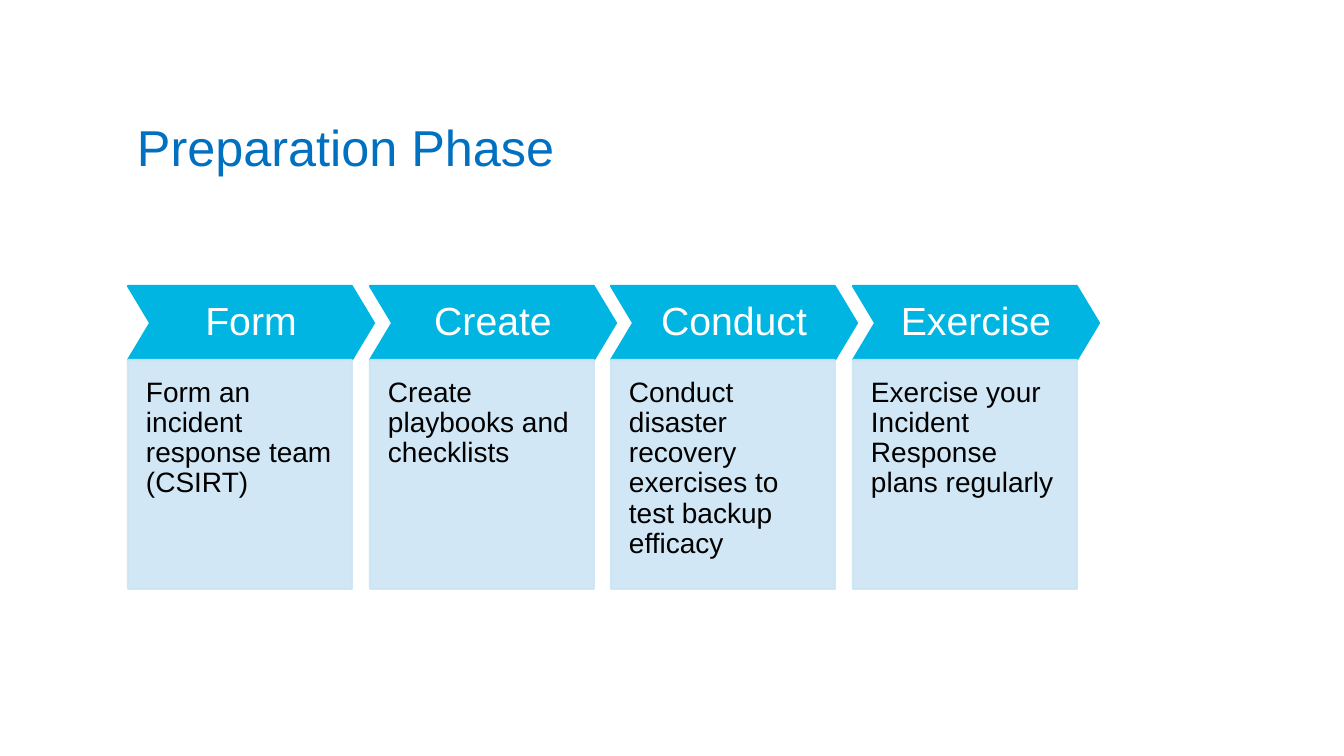
from lxml.etree import SubElement
from pptx import Presentation
from pptx.dml.color import RGBColor
from pptx.enum.shapes import MSO_SHAPE
from pptx.enum.text import MSO_ANCHOR, PP_ALIGN
from pptx.oxml.ns import qn
from pptx.util import Pt

SCALE = 914400 / 100.8
STEPS = [
    ("Form", "Form an incident response team (CSIRT)"),
    ("Create", "Create playbooks and checklists"),
    ("Conduct", "Conduct disaster recovery exercises to test backup efficacy"),
    ("Exercise", "Exercise your Incident Response plans regularly"),
]


def px(size):
    return round(size * SCALE)


def color(code):
    return RGBColor.from_string(code)


def write(shape, text, size, tint, pads, anchor, align=PP_ALIGN.LEFT, space=1.0):
    frame = shape.text_frame
    frame.word_wrap = True
    frame.vertical_anchor = anchor
    (frame.margin_left, frame.margin_top,
     frame.margin_right, frame.margin_bottom) = map(px, pads)
    frame.text = text
    para = frame.paragraphs[0]
    para.alignment = align
    para.line_spacing = space
    font = para.runs[0].font
    font.name, font.size = "Arial", Pt(size)
    font.color.rgb = color(tint)


def block(slide, kind, box, tint, alpha=None):
    shape = slide.shapes.add_shape(kind, *map(px, box))
    shape.shadow.inherit = False
    shape.line.width = Pt(1.5)
    for fill in (shape.fill, shape.line.fill):
        fill.solid()
        fill.fore_color.rgb = color(tint)
    if alpha:
        # Fill and outline share the same transparency
        for node in list(shape.element.spPr.iter(qn("a:srgbClr"))):
            SubElement(node, qn("a:alpha")).set("val", str(alpha * 1000))
    return shape


def title(slide, box, text):
    shape = slide.shapes.add_textbox(*map(px, box))
    write(shape, text, 36, "0070C0", (10, 5, 10, 5), MSO_ANCHOR.MIDDLE)


def step(slide, box, name, note):
    left, top, width, height = box
    head, tip = 74, 22

    # Chevron heading, whose tip reaches past the panel
    arrow = block(slide, MSO_SHAPE.CHEVRON,
                  (left, top, width + tip, head), "00B5E2")
    arrow.adjustments[0] = 0.3
    write(arrow, name, 28, "FFFFFF", (9, 9, 9, 9),
          MSO_ANCHOR.MIDDLE, PP_ALIGN.CENTER, 0.9)

    # Panel with the description
    panel = block(slide, MSO_SHAPE.RECTANGLE,
                  (left, top + head, width, height - head), "CCE5F4", 90)
    write(panel, note, 20, "000000", (18, 18, 18, 35), MSO_ANCHOR.TOP, space=0.9)


def process(slide, box, steps):
    left, top, width, height = box
    wide = 224
    pitch = (width - wide) / (len(steps) - 1)
    for i, (name, note) in enumerate(steps):
        step(slide, (left + round(i * pitch), top, wide, height), name, note)


def main():
    deck = Presentation()
    deck.slide_width, deck.slide_height = px(1344), px(756)
    slide = deck.slides.add_slide(deck.slide_layouts[6])
    title(slide, (127, 107, 966, 78), "Preparation Phase")
    process(slide, (128, 286, 949, 303), STEPS)
    deck.save("out.pptx")


if __name__ == "__main__":
    main()
